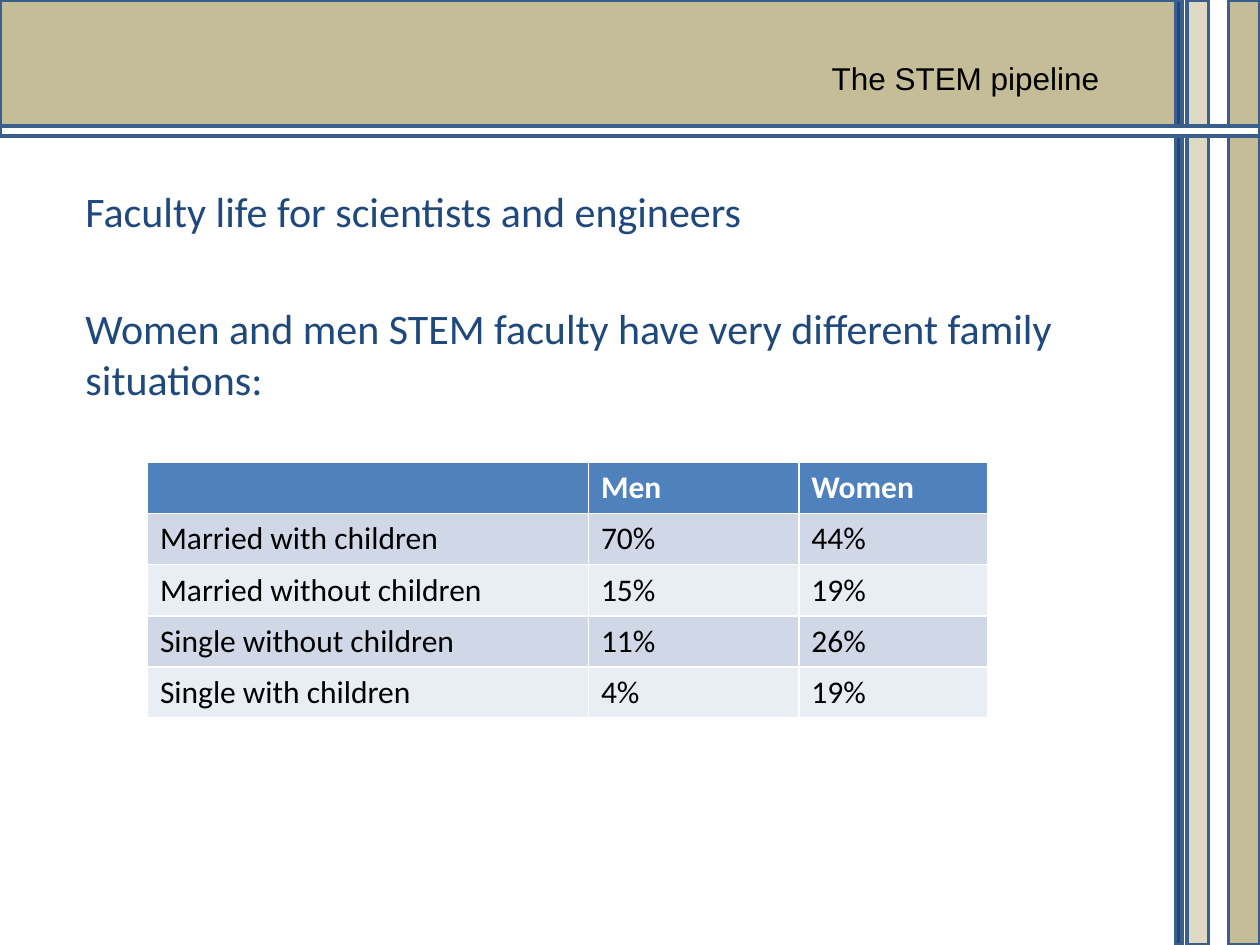
from pptx import Presentation
from pptx.dml.color import RGBColor
from pptx.enum.shapes import MSO_SHAPE
from pptx.enum.text import MSO_ANCHOR, PP_ALIGN
from pptx.util import Inches, Pt


def paint(fill, color):
    fill.solid()
    fill.fore_color.rgb = RGBColor.from_string(color)


def style(par, name, size, color, bold=False):
    par.font.name = name
    par.font.size = Pt(size)
    par.font.bold = bold
    par.font.color.rgb = RGBColor.from_string(color)


deck = Presentation()
deck.slide_width, deck.slide_height = Inches(10), Inches(7.5)
slide = deck.slides.add_slide(deck.slide_layouts[5])
shapes = slide.shapes

# Bands along the top and right edges
bands = [
    (0, 0, 9.33, 1, "C4BD97"),
    (9.75, 0, 0.25, 7.5, "C4BD97"),
    (9.42, 0, 0.17, 7.5, "DDD9C3"),
    (9.33, 0, 0.05, 7.5, "1F497D"),
    (0, 1, 10, 0.08, "FFFFFF"),
]
for *place, color in bands:
    band = shapes.add_shape(MSO_SHAPE.RECTANGLE, *map(Inches, place))
    band.shadow.inherit = False
    paint(band.fill, color)
    paint(band.line.fill, "3A5F8C")
    band.line.width = Pt(2)

# Title, brought in front of the bands
title = shapes.title
title.left, title.top = Inches(6.5), Inches(0.42)
title.width, title.height = Inches(2.35), Inches(0.4)
title.text = "The STEM pipeline"
title.text_frame.word_wrap = False
title.text_frame.vertical_anchor = MSO_ANCHOR.TOP
head = title.text_frame.paragraphs[0]
head.alignment = PP_ALIGN.LEFT
style(head, "Arial", 18, "000000")
title.element.getparent().append(title.element)

# Body
body = shapes.add_textbox(Inches(0.58), Inches(1.42), Inches(8.25), Inches(5.33))
frame = body.text_frame
frame.word_wrap = True
frame.text = (
    "Faculty life for scientists and engineers\n"
    "Women and men STEM faculty have very different family situations:"
)
for par in frame.paragraphs:
    style(par, "Calibri", 24, "1F497D")
frame.paragraphs[1].space_before = Pt(38.5)

# Table
rows = [
    ("", "Men", "Women"),
    ("Married with children", "70%", "44%"),
    ("Married without children", "15%", "19%"),
    ("Single without children", "11%", "26%"),
    ("Single with children", "4%", "19%"),
]
widths = (3.5, 1.67, 1.5)
table = shapes.add_table(
    len(rows), len(widths), Inches(1.17), Inches(3.67),
    Inches(sum(widths)), Inches(2.03),
).table
for col, width in zip(table.columns, widths):
    col.width = Inches(width)
for r, row in enumerate(rows):
    top = r == 0
    shade = "4F81BD" if top else ("E9EDF4", "D0D8E8")[r % 2]
    for c, text in enumerate(row):
        cell = table.cell(r, c)
        cell.text = text
        paint(cell.fill, shade)
        style(cell.text_frame.paragraphs[0], "Calibri", 18,
              "FFFFFF" if top else "000000", top)

deck.save("out.pptx")
